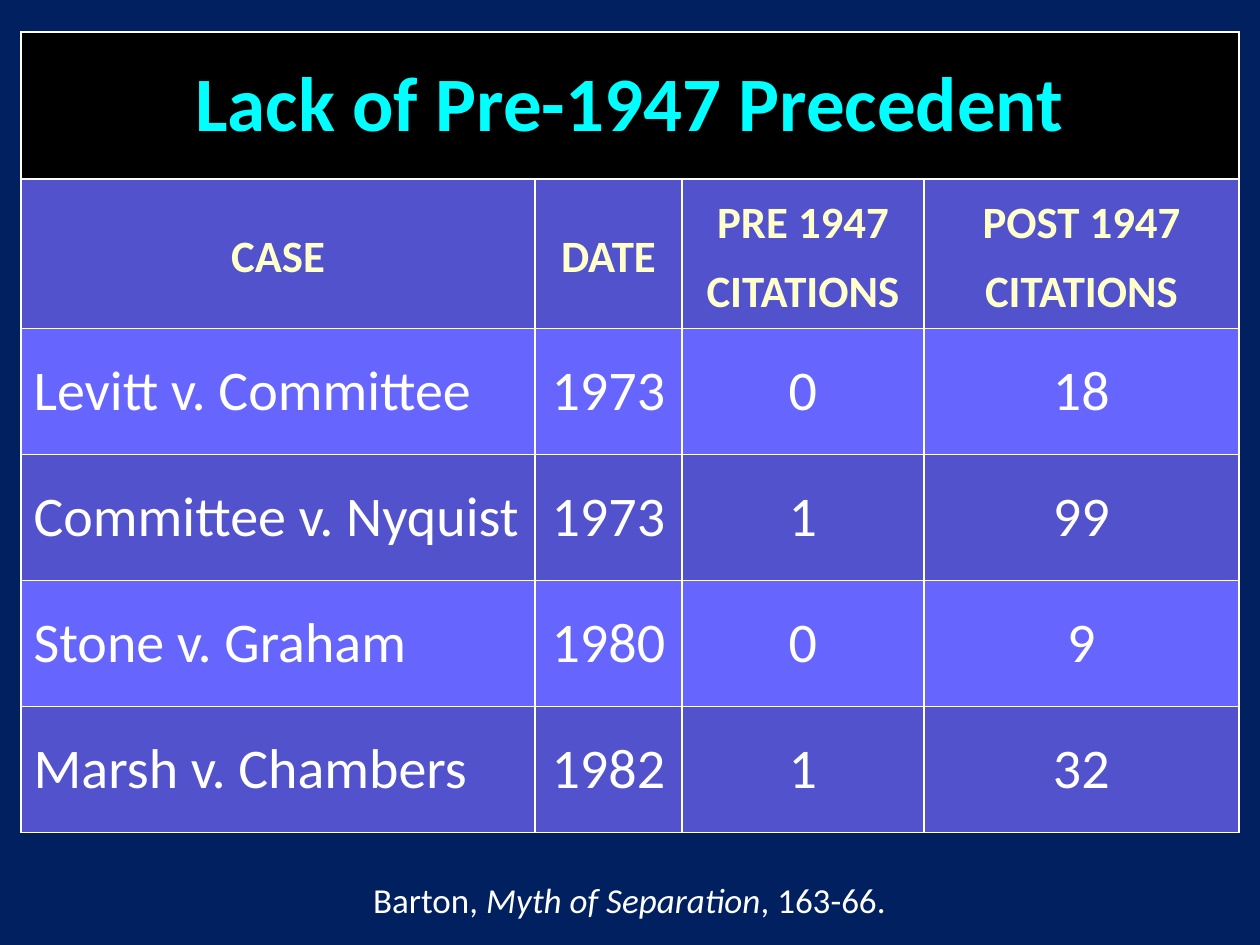
from lxml.etree import SubElement
from pptx import Presentation
from pptx.dml.color import RGBColor
from pptx.enum.text import MSO_ANCHOR, MSO_AUTO_SIZE, PP_ALIGN
from pptx.oxml import parse_xml
from pptx.oxml.ns import nsdecls, qn
from pptx.util import Emu, Pt

TITLE = "Lack of Pre-1947 Precedent"
HEADERS = ["case", "date", "pre 1947 citations", "post 1947 citations"]
CASES = [
    ("Levitt v. Committee", "1973", "0", "18"),
    ("Committee v. Nyquist", "1973", "1", "99"),
    ("Stone v. Graham", "1980", "0", "9"),
    ("Marsh v. Chambers", "1982", "1", "32"),
]
SOURCE = [("Barton, ", False), ("Myth of Separation", True), (", 163-66.", False)]

COLUMNS = [514, 147, 242, 315]
TITLE_H, ROW_H = 147, 126
NAVY, BLACK, WHITE = "002060", "000000", "FFFFFF"
CYAN, CREAM = "00FFFF", "FFFFCC"
BANDS = ["5252CC", "6666FF"]


def px(n):
    return Emu(round(n * 914400 / 126))


def color(value):
    return RGBColor.from_string(value)


def add_text(p, text, size=32, fill=WHITE, bold=False, italic=False,
             small_caps=False, align=PP_ALIGN.CENTER):
    p.alignment = align
    r = p.add_run()
    r.text = text
    font = r.font
    font.name, font.size, font.bold, font.italic = "Calibri", Pt(size), bold, italic
    font.color.rgb = color(fill)
    if small_caps:
        r._r.get_or_add_rPr().set("cap", "small")


def add_borders(cell):
    """Put a 1 pt white line on all four sides, ahead of the cell's fill."""
    tc_pr = cell._tc.get_or_add_tcPr()
    for i, side in enumerate(("lnL", "lnR", "lnT", "lnB")):
        ln = parse_xml(f'<a:{side} {nsdecls("a")} w="12700"/>')
        fill = SubElement(ln, qn("a:solidFill"))
        SubElement(fill, qn("a:srgbClr"), val=WHITE)
        tc_pr.insert(i, ln)


def style_cell(cell, fill):
    cell.fill.solid()
    cell.fill.fore_color.rgb = color(fill)
    cell.vertical_anchor = MSO_ANCHOR.MIDDLE
    add_borders(cell)


def add_case_table(s):
    rows = [(TITLE, "", "", ""), HEADERS, *CASES]
    heights = [TITLE_H] + [ROW_H] * (len(rows) - 1)
    table = s.shapes.add_table(len(rows), len(COLUMNS), px(21), px(32),
                               px(sum(COLUMNS)), px(sum(heights))).table
    for column, width in zip(table.columns, COLUMNS):
        column.width = px(width)
    for row, height in zip(table.rows, heights):
        row.height = px(height)
    table.cell(0, 0).merge(table.cell(0, len(COLUMNS) - 1))

    for i, values in enumerate(rows):
        for j, text in enumerate(values):
            cell = table.cell(i, j)
            style_cell(cell, BLACK if i == 0 else BANDS[(i - 1) % 2])
            if not text:
                continue
            if i == 0:
                style = dict(size=44, fill=CYAN, bold=True)
            elif i == 1:
                style = dict(fill=CREAM, bold=True, small_caps=True)
            else:
                style = dict(align=PP_ALIGN.CENTER if j else PP_ALIGN.LEFT)
            add_text(cell.text_frame.paragraphs[0], text, **style)


def add_source(s):
    tf = s.shapes.add_textbox(px(359), px(872), px(541), px(55)).text_frame
    tf.word_wrap = False
    tf.auto_size = MSO_AUTO_SIZE.SHAPE_TO_FIT_TEXT
    for text, italic in SOURCE:
        add_text(tf.paragraphs[0], text, size=20, italic=italic)


def main():
    prs = Presentation()
    prs.slide_width, prs.slide_height = px(1260), px(945)
    s = prs.slides.add_slide(prs.slide_layouts[6])
    s.background.fill.solid()
    s.background.fill.fore_color.rgb = color(NAVY)
    add_case_table(s)
    add_source(s)
    prs.save("out.pptx")


if __name__ == "__main__":
    main()
